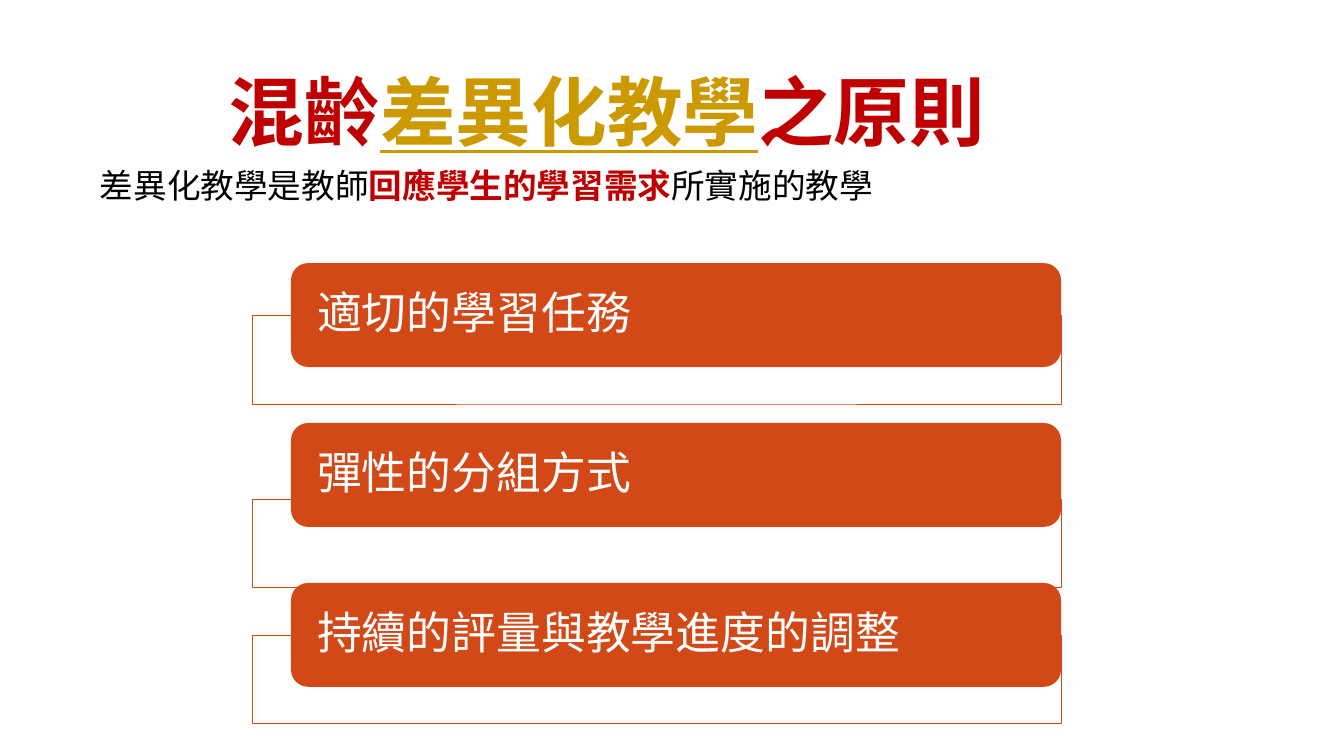
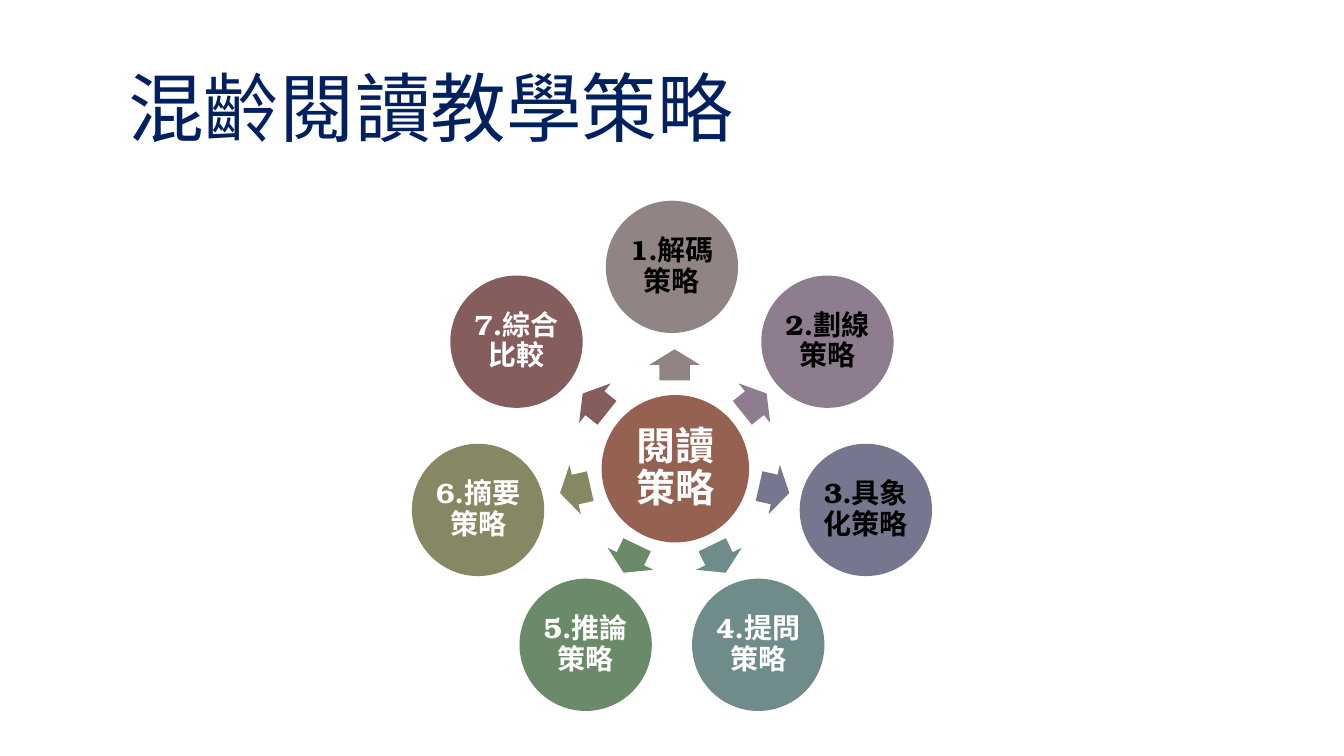
from math import cos, radians, sin

from pptx import Presentation
from pptx.dml.color import RGBColor
from pptx.enum.shapes import MSO_SHAPE
from pptx.enum.text import MSO_ANCHOR, PP_ALIGN
from pptx.oxml.ns import qn
from pptx.util import Inches, Pt

CJK, SERIF, NARROW = "Noto Sans CJK SC", "TeX Gyre Bonum", "Arial Narrow"
WHITE, BLACK, RED, GOLD = "FFFFFF", "000000", "C00000", "CC9900"
NAVY, ORANGE, HUB = "002060", "D34817", "956251"
TITLE_SIZE = 54

deck = Presentation()
deck.slide_width, deck.slide_height = Inches(13.33), Inches(7.5)
ASPECT = deck.slide_height / deck.slide_width


def draw(slide, kind, left, top, width, height, fill=None, line=None):
    """Add a shape, or a text box if kind is None; lengths are percent of the slide."""
    box = [int(share * side / 100) for share, side in (
        (left, deck.slide_width), (top, deck.slide_height),
        (width, deck.slide_width), (height, deck.slide_height))]
    if kind is None:
        return slide.shapes.add_textbox(*box)
    shape = slide.shapes.add_shape(kind, *box)
    shape.shadow.inherit = False
    shape.fill.solid()
    shape.fill.fore_color.rgb = RGBColor.from_string(fill)
    if line:
        shape.line.color.rgb = RGBColor.from_string(line)
        shape.line.width = Pt(0.5)
    else:
        shape.line.fill.background()
    return shape


def write(shape, size, runs, align=PP_ALIGN.LEFT, anchor=MSO_ANCHOR.MIDDLE, insets=(0.1, 0.05)):
    """Fill a shape with one paragraph of (text, colour, bold, underline, font) runs."""
    frame = shape.text_frame
    frame.word_wrap = True
    frame.vertical_anchor = anchor
    frame.margin_left = frame.margin_right = Inches(insets[0])
    frame.margin_top = frame.margin_bottom = Inches(insets[1])
    paragraph = frame.paragraphs[0]
    paragraph.alignment = align
    paragraph.line_spacing = 0.9
    for text, colour, bold, underline, typeface in runs:
        run = paragraph.add_run()
        run.text = text
        font = run.font
        font.size, font.bold, font.underline, font.name = Pt(size), bold, underline, typeface
        font.color.rgb = RGBColor.from_string(colour)
        east_asian = run._r.rPr.makeelement(qn("a:ea"), {"typeface": CJK})
        run._r.rPr.find(qn("a:latin")).addnext(east_asian)


blank = deck.slide_layouts[6]

# Principles of differentiated teaching
principles = deck.slides.add_slide(blank)
write(draw(principles, None, 16.3, 6.9, 67.5, 16.8), TITLE_SIZE, [
    ("混齡", RED, True, False, CJK),
    ("差異化教學", GOLD, True, True, CJK),
    ("之原則", RED, True, False, CJK)])
write(draw(principles, None, 6.7, 21.7, 86.4, 8), 24, [
    ("差異化教學是教師", BLACK, False, False, CJK),
    ("回應學生的學習需求", RED, True, False, CJK),
    ("所實施的教學", BLACK, False, False, CJK)], anchor=MSO_ANCHOR.TOP)

BAR_TOP, BAR_PITCH = 34.8, 21.15
for row, (principle, frame_top) in enumerate([
        ("適切的學習任務", 41.7),
        ("彈性的分組方式", 66),
        ("持續的評量與教學進度的調整", 84)]):
    draw(principles, MSO_SHAPE.RECTANGLE, 18.75, frame_top, 60.2, 11.75, WHITE, ORANGE)
    bar = draw(principles, MSO_SHAPE.ROUNDED_RECTANGLE,
               21.65, BAR_TOP + row * BAR_PITCH, 57.3, 13.75, ORANGE)
    write(bar, 32, [(principle, WHITE, False, False, CJK)], insets=(0.21, 0))

# Reading strategies around a hub
strategies = deck.slides.add_slide(blank)
write(draw(strategies, None, 8.8, 7.1, 82.5, 15.3), TITLE_SIZE,
      [("混齡閱讀教學策略", NAVY, False, False, NARROW)])

HUB_SIZE, DISC_SIZE = 19.5, 17.5
ARROW_LENGTH, ARROW_BREADTH = 4.1, 6.7
hub = draw(strategies, MSO_SHAPE.OVAL, 50.25 - HUB_SIZE * ASPECT / 2, 62 - HUB_SIZE / 2,
           HUB_SIZE * ASPECT, HUB_SIZE, HUB)
write(hub, 28, [("閱讀策略", WHITE, True, False, CJK)], PP_ALIGN.CENTER, insets=(0.04, 0.04))

ring = [
    ("解碼策略", "918485", BLACK),
    ("劃線策略", "8E7D8F", BLACK),
    ("具象化策略", "76778E", BLACK),
    ("提問策略", "6F8C8B", WHITE),
    ("推論策略", "6A8A69", WHITE),
    ("摘要策略", "888763", WHITE),
    ("綜合比較", "855D5D", WHITE),
]
for step, (strategy, colour, ink) in enumerate(ring):
    angle = 270 + step * 360 / len(ring)
    across, down = cos(radians(angle)) * ASPECT, sin(radians(angle))
    arrow = draw(strategies, MSO_SHAPE.RIGHT_ARROW,
                 50.2 + 13.5 * across - ARROW_LENGTH * ASPECT / 2,
                 61.75 + 13.5 * down - ARROW_BREADTH / 2,
                 ARROW_LENGTH * ASPECT, ARROW_BREADTH, colour)
    arrow.adjustments[0], arrow.adjustments[1] = 0.6, 0.5
    arrow.rotation = angle % 360
    disc = draw(strategies, MSO_SHAPE.OVAL,
                50 + 26.3 * across - DISC_SIZE * ASPECT / 2,
                61.6 + 26.3 * down - DISC_SIZE / 2,
                DISC_SIZE * ASPECT, DISC_SIZE, colour)
    write(disc, 20, [(f"{step + 1}.", ink, True, False, SERIF),
                     (strategy, ink, True, False, CJK)],
          PP_ALIGN.CENTER, insets=(0.03, 0.03))

deck.save("out.pptx")
